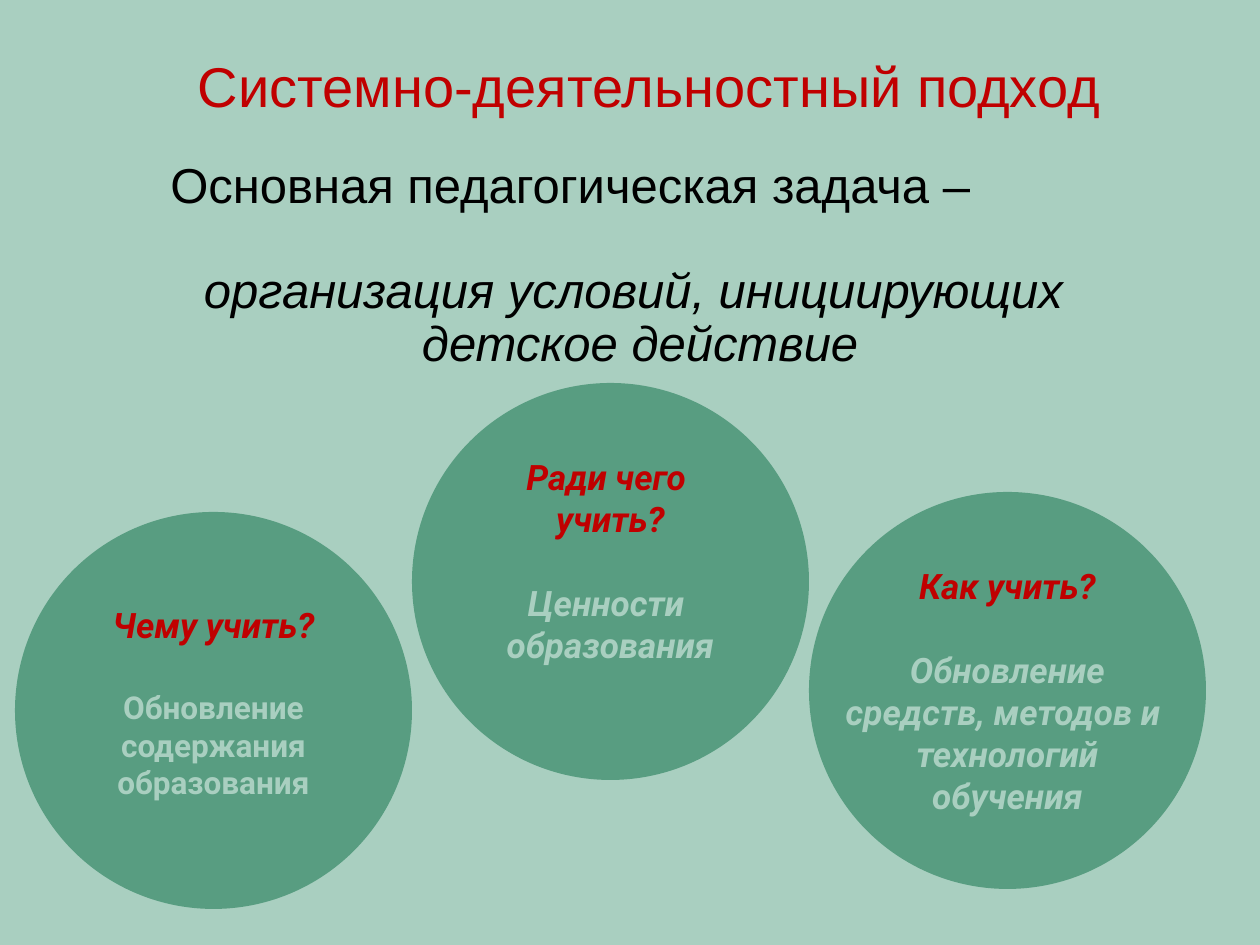
from dataclasses import dataclass

from pptx import Presentation
from pptx.dml.color import RGBColor
from pptx.enum.shapes import MSO_SHAPE
from pptx.enum.text import MSO_ANCHOR, PP_ALIGN
from pptx.util import Emu, Pt

ELLIPSE = MSO_SHAPE.OVAL
LEFT, CENTER = PP_ALIGN.LEFT, PP_ALIGN.CENTER
TOP, MIDDLE, BOTTOM = MSO_ANCHOR.TOP, MSO_ANCHOR.MIDDLE, MSO_ANCHOR.BOTTOM

PX_PER_INCH = 126
MINT, GREEN, RED, BLACK = "A9CFC0", "589D81", "C00000", "000000"
DIAMETER = 397
FIRST_CIRCLE_LEFT = 15


@dataclass
class Line:
    text: str
    size: int
    color: str
    font: str = "Arial"
    bold: bool = False
    italic: bool = False
    align: PP_ALIGN = CENTER
    before: int = 0
    spacing: float = 1.0
    margin: int = 0


@dataclass
class Circle:
    top: int
    question: list[str]
    answer: list[str]
    answer_size: int = 20
    answer_italic: bool = True
    bottom_inset: int = 6


def px(length: int) -> Emu:
    return Emu(round(length * 914400 / PX_PER_INCH))


def rgb(color: str) -> RGBColor:
    return RGBColor.from_string(color)


def write_lines(frame, lines: list[Line]) -> None:
    for index, line in enumerate(lines):
        paragraph = frame.add_paragraph() if index else frame.paragraphs[0]
        paragraph.text = line.text
        paragraph.alignment = line.align
        paragraph.line_spacing = line.spacing
        if line.before:
            paragraph.space_before = Pt(line.before)
        if line.margin:
            paragraph._p.get_or_add_pPr().set("marL", str(px(line.margin)))
        font = paragraph.font
        font.name, font.size = line.font, Pt(line.size)
        font.bold, font.italic = line.bold, line.italic
        font.color.rgb = rgb(line.color)


def add_text(slide, left: int, top: int, width: int, height: int,
             anchor: MSO_ANCHOR, lines: list[Line]) -> None:
    frame = slide.shapes.add_textbox(px(left), px(top), px(width), px(height)).text_frame
    frame.word_wrap = True
    frame.vertical_anchor = anchor
    write_lines(frame, lines)


def add_circle(slide, left: int, circle: Circle) -> None:
    shape = slide.shapes.add_shape(ELLIPSE, px(left), px(circle.top), px(DIAMETER), px(DIAMETER))
    shape.shadow.inherit = False
    shape.fill.solid()
    shape.fill.fore_color.rgb = rgb(GREEN)
    shape.line.fill.background()
    frame = shape.text_frame
    frame.word_wrap = False
    frame.vertical_anchor = MIDDLE
    frame.margin_bottom = px(circle.bottom_inset)
    question = [Line(text, 20, RED, "Roboto", True, True) for text in circle.question]
    answer = [Line(text, circle.answer_size, MINT, "Roboto", True, circle.answer_italic)
              for text in circle.answer]
    answer[0].before = 24
    write_lines(frame, question + answer)


def main() -> None:
    presentation = Presentation()
    presentation.slide_width, presentation.slide_height = px(1260), px(945)
    slide = presentation.slides.add_slide(presentation.slide_layouts[6])
    slide.background.fill.solid()
    slide.background.fill.fore_color.rgb = rgb(MINT)

    # Main pedagogical task
    add_text(slide, 0, 155, 1226, 225, TOP, [
        Line("Основная педагогическая задача –", 28, BLACK,
             align=LEFT, spacing=0.9, margin=158),
        Line("организация условий, инициирующих ", 28, BLACK,
             italic=True, before=30, spacing=0.9, margin=54),
        Line("детское действие", 28, BLACK, italic=True, spacing=0.9, margin=54),
    ])

    # Title
    add_text(slide, 59, 35, 1181, 90, BOTTOM,
             [Line("Системно-деятельностный подход", 32, RED)])

    # Three questions, side by side
    circles = [
        Circle(512, ["Чему учить?"], ["Обновление", "содержания", "образования"],
               answer_size=18, answer_italic=False, bottom_inset=22),
        Circle(383, ["Ради чего ", "учить?"], ["Ценности ", "образования"], bottom_inset=48),
        Circle(492, ["Как учить?"],
               ["Обновление", "средств, методов и ", "технологий", "обучения"]),
    ]
    for index, circle in enumerate(circles):
        add_circle(slide, FIRST_CIRCLE_LEFT + index * DIAMETER, circle)

    presentation.save("out.pptx")


if __name__ == "__main__":
    main()
